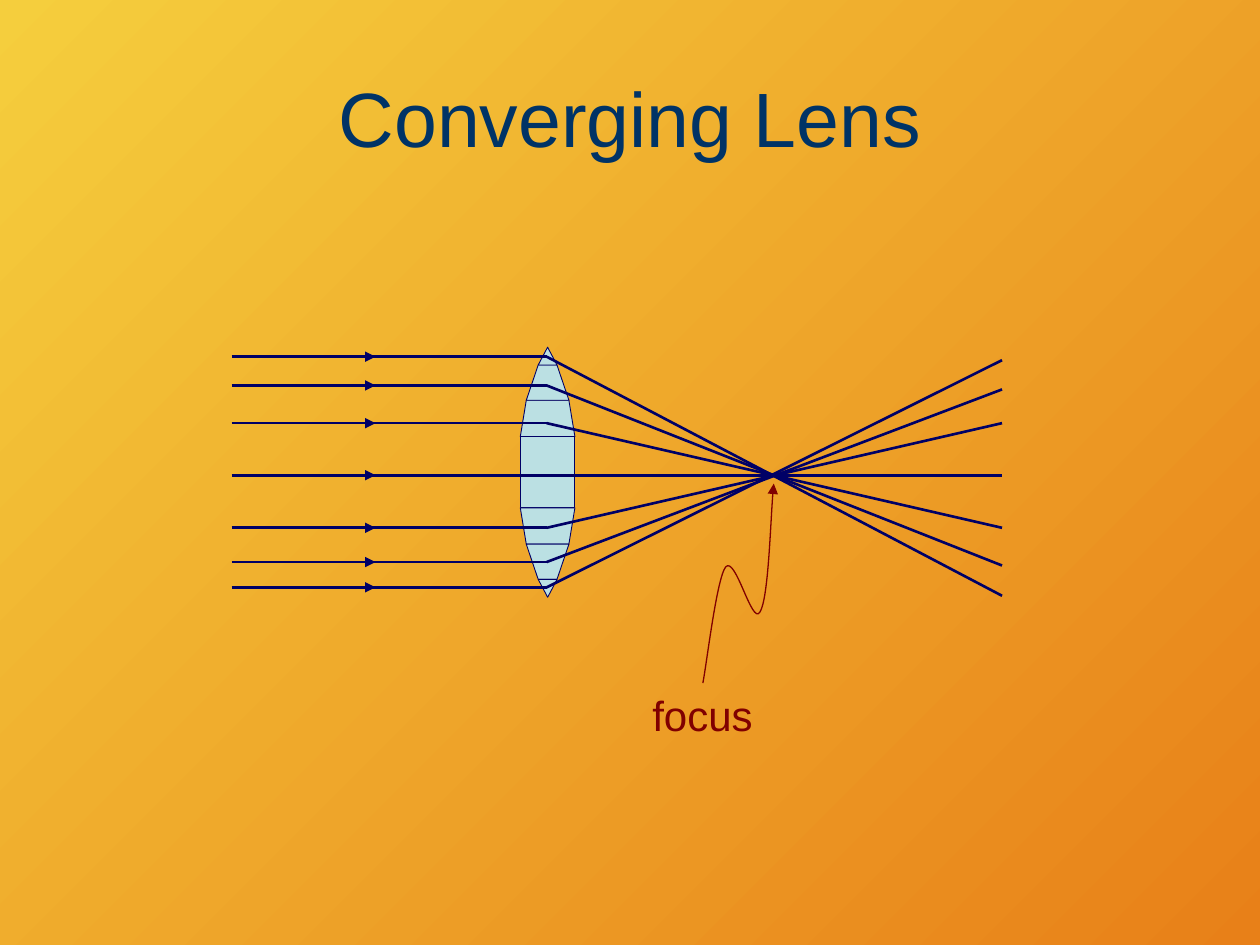
from dataclasses import dataclass

import pptx
import pptx.dml.color
import pptx.enum.shapes
import pptx.enum.text
import pptx.oxml
import pptx.oxml.ns
import pptx.util
from pptx.util import Cm

NAVY, TITLE_BLUE, GLASS, MAROON = "000066", "003366", "BBE0E3", "800000"
Point = tuple[float, float]


@dataclass(frozen=True)
class Ray:
    """Height of a ray at the lens and at its far end, in cm."""
    lens_y: float
    end_y: float


@dataclass(frozen=True)
class Section:
    """Lens slice from an inner to an outer distance from the axis, in cm."""
    inner: float
    outer: float
    inner_half: float
    outer_half: float


RAYS = [Ray(9.58, 9.58), Ray(8.53, 10.64), Ray(7.77, 11.4), Ray(10.64, 8.53),
        Ray(7.19, 12.01), Ray(11.33, 7.85), Ray(11.84, 7.26)]
RAY_START, RAY_LENS, RAY_END = 4.67, 11.02, 20.2
ARROW_START, ARROW_END = 6.73, 7.57

LENS_X, LENS_Y = 11.04, 9.52
CORE_HALF_WIDTH, CORE_HALF_HEIGHT = 0.55, 0.72
SECTIONS = [Section(0.72, 1.45, 0.55, 0.43), Section(1.45, 2.16, 0.43, 0.19)]
TIP_INNER, TIP_HEIGHT, TIP_HALF = 2.16, 0.36, 0.19

# Start of the pointer, then two control points and an end for each curve
POINTER_START = (14.17, 13.77)
POINTER_CURVES = [[(14.25, 13.36), (14.45, 11.66), (14.63, 11.43)],
                  [(14.83, 11.2), (15.16, 12.62), (15.32, 12.34)],
                  [(15.49, 12.07), (15.54, 10.29), (15.6, 9.75)]]


def color(code: str) -> pptx.dml.color.RGBColor:
    return pptx.dml.color.RGBColor.from_string(code)


def style_line(line, code: str, width: float, arrow: bool = False) -> None:
    line.color.rgb = color(code)
    line.width = pptx.util.Pt(width)
    if arrow:
        pptx.oxml.ns.qn("a:tailEnd")
        tail = line._get_or_add_ln().makeelement(
            pptx.oxml.ns.qn("a:tailEnd"), {"type": "triangle"})
        line._get_or_add_ln().append(tail)


def style_glass(shape) -> None:
    shape.shadow.inherit = False
    shape.fill.solid()
    shape.fill.fore_color.rgb = color(GLASS)
    style_line(shape.line, NAVY, 0.5)


def add_line(shapes, start: Point, end: Point, width: float,
             arrow: bool = False) -> None:
    connector = shapes.add_connector(
        pptx.enum.shapes.MSO_CONNECTOR.STRAIGHT,
        Cm(start[0]), Cm(start[1]), Cm(end[0]), Cm(end[1]))
    style_line(connector.line, NAVY, width, arrow)
    properties = connector._element.spPr
    properties.append(properties.makeelement(pptx.oxml.ns.qn("a:effectLst"), {}))


def add_outline(shapes, points: list[Point], close: bool):
    first, *rest = [(Cm(x), Cm(y)) for x, y in points]
    builder = shapes.build_freeform(*first)
    builder.add_line_segments(rest, close=close)
    shape = builder.convert_to_shape()
    shape.shadow.inherit = False
    return shape


def add_text(paragraph, text: str, size: float, code: str) -> None:
    run = paragraph.add_run()
    run.text = text
    run.font.name = "Arial"
    run.font.size = pptx.util.Pt(size)
    run.font.color.rgb = color(code)


def add_lens(shapes) -> None:
    core = shapes.add_shape(
        pptx.enum.shapes.MSO_SHAPE.RECTANGLE,
        Cm(LENS_X - CORE_HALF_WIDTH), Cm(LENS_Y - CORE_HALF_HEIGHT),
        Cm(2 * CORE_HALF_WIDTH), Cm(2 * CORE_HALF_HEIGHT))
    style_glass(core)
    for side in (1, -1):
        for part in SECTIONS:
            inner_y = LENS_Y + side * part.inner
            outer_y = LENS_Y + side * part.outer
            style_glass(add_outline(shapes, [
                (LENS_X - part.inner_half, inner_y),
                (LENS_X - part.outer_half, outer_y),
                (LENS_X + part.outer_half, outer_y),
                (LENS_X + part.inner_half, inner_y)], close=True))
        tip_top = LENS_Y + (TIP_INNER if side == 1 else -TIP_INNER - TIP_HEIGHT)
        tip = shapes.add_shape(
            pptx.enum.shapes.MSO_SHAPE.ISOSCELES_TRIANGLE,
            Cm(LENS_X - TIP_HALF), Cm(tip_top), Cm(2 * TIP_HALF), Cm(TIP_HEIGHT))
        tip.rotation = 180 if side == 1 else 0
        style_glass(tip)


def add_pointer(shapes) -> None:
    anchors = [POINTER_START] + [curve[-1] for curve in POINTER_CURVES]
    pointer = add_outline(shapes, anchors, close=False)
    pointer.fill.background()
    style_line(pointer.line, MAROON, 0.75, arrow=True)
    # Turn each straight segment into a cubic curve
    left = min(x for x, _ in anchors)
    top = min(y for _, y in anchors)
    segments = list(pointer._element.iter(pptx.oxml.ns.qn("a:lnTo")))
    for segment, curve in zip(segments, POINTER_CURVES):
        bezier = segment.makeelement(pptx.oxml.ns.qn("a:cubicBezTo"), {})
        for x, y in curve:
            bezier.append(bezier.makeelement(pptx.oxml.ns.qn("a:pt"), {
                "x": str(int(Cm(x - left))), "y": str(int(Cm(y - top)))}))
        segment.getparent().replace(segment, bezier)


def main() -> None:
    deck = pptx.Presentation()
    deck.slide_width, deck.slide_height = Cm(25.4), Cm(19.05)
    slide = deck.slides.add_slide(deck.slide_layouts[5])

    # Background
    backdrop = slide.background.fill
    backdrop.gradient()
    backdrop.gradient_angle = 315
    for stop, code in zip(backdrop.gradient_stops, ("F5CE3D", "E88018")):
        stop.color.rgb = color(code)
    backdrop.gradient_stops[0].position = 0
    backdrop.gradient_stops[1].position = 1

    # Title
    title = slide.shapes.title
    title.left, title.top = Cm(1.27), Cm(0.76)
    title.width, title.height = Cm(22.86), Cm(3.18)
    title.text_frame.vertical_anchor = pptx.enum.text.MSO_ANCHOR.MIDDLE
    heading = title.text_frame.paragraphs[0]
    heading.alignment = pptx.enum.text.PP_ALIGN.CENTER
    add_text(heading, "Converging Lens", 44, TITLE_BLUE)

    # Lens
    add_lens(slide.shapes.add_group_shape().shapes)

    # Parallel rays, then the rays crossing at the focus
    incoming = slide.shapes.add_group_shape().shapes
    refracted = slide.shapes.add_group_shape().shapes
    for ray in RAYS:
        add_line(incoming, (RAY_START, ray.lens_y), (RAY_LENS, ray.lens_y), 1.5)
        add_line(incoming, (ARROW_START, ray.lens_y), (ARROW_END, ray.lens_y),
                 0.75, arrow=True)
        add_line(refracted, (RAY_LENS, ray.lens_y), (RAY_END, ray.end_y), 1.5)

    # Focus label with its pointer
    callout = slide.shapes.add_group_shape().shapes
    focus = callout.add_textbox(Cm(12.9), Cm(13.77), Cm(2.54), Cm(1.27))
    focus.text_frame.word_wrap = False
    focus.text_frame.auto_size = pptx.enum.text.MSO_AUTO_SIZE.SHAPE_TO_FIT_TEXT
    add_text(focus.text_frame.paragraphs[0], "focus", 24, MAROON)
    add_pointer(callout)

    deck.save("out.pptx")


if __name__ == "__main__":
    main()
